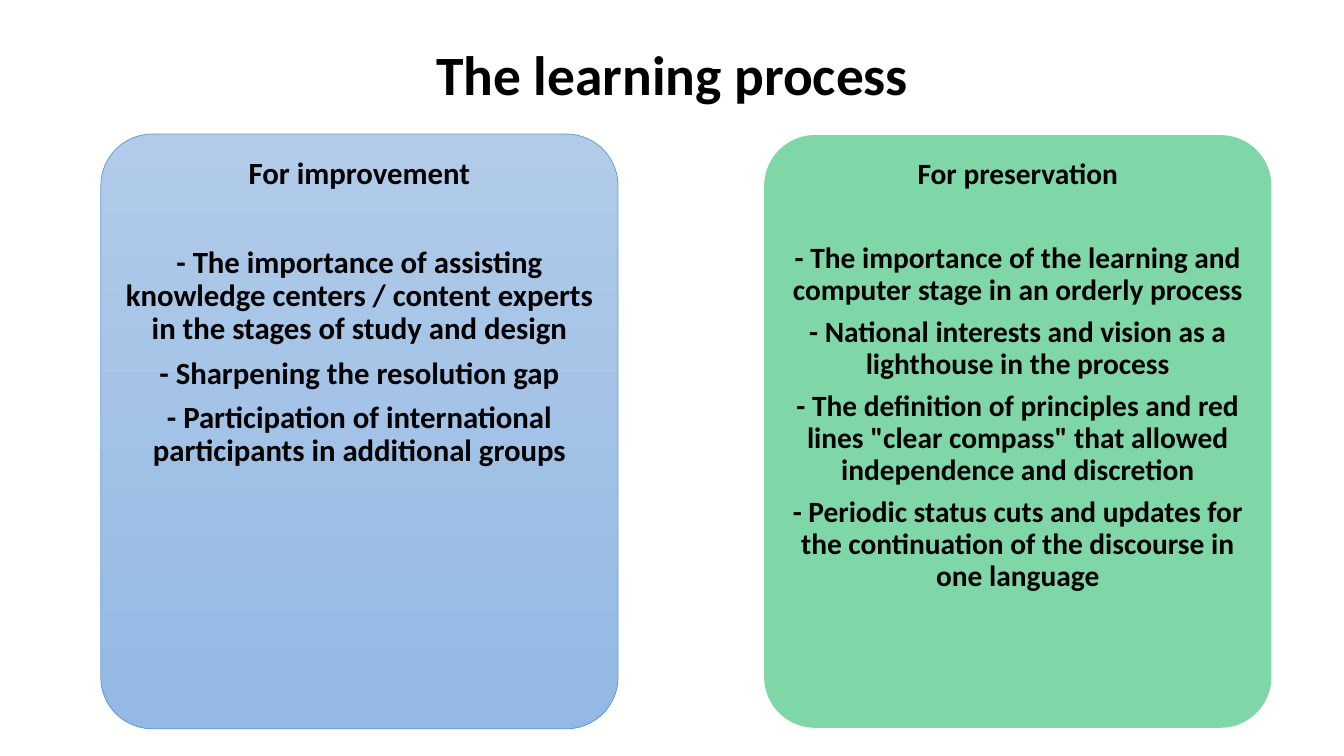
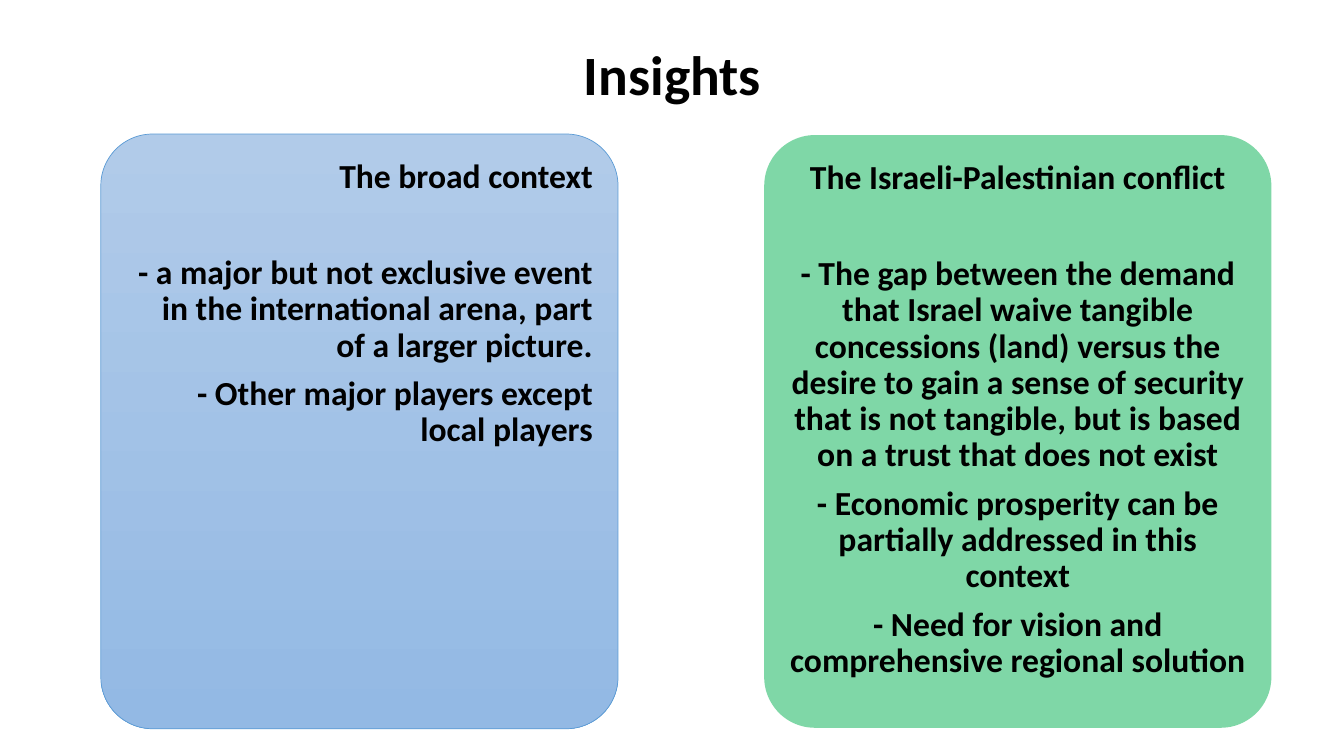
from pptx import Presentation
from pptx.dml.color import RGBColor
from pptx.enum.shapes import MSO_SHAPE
from pptx.enum.text import MSO_ANCHOR, MSO_AUTO_SIZE, PP_ALIGN
from pptx.oxml.ns import qn
from pptx.util import Inches, Pt
from lxml.etree import SubElement

FONT = "Calibri"
BLACK = "000000"
BLUE_LIGHT, BLUE_DARK, BLUE_LINE = "B1CBE9", "93B9E4", "5B9BD5"
GREEN = "00B050"
GREEN_OPACITY = 50
TITLE_BOX = (0.58, 0.4, 12.18, 0.74)
LEFT_BOX = (1, 1.33, 5.13, 5.9)
RIGHT_BOX = (7.58, 1.34, 5.03, 5.88)
CORNER = 0.1
LINE_SPACING = 0.9
# Space after a paragraph, as a multiple of the text size
HEADING_GAP, POINT_GAP = 1.79, 0.36

SLIDES = [
    ("The learning process",
     (22, PP_ALIGN.CENTER, "For improvement", [
         "- The importance of assisting knowledge centers / content experts "
         "in the stages of study and design",
         "- Sharpening the resolution gap",
         "- Participation of international participants in additional groups",
     ]),
     (21, PP_ALIGN.CENTER, "For preservation", [
         "- The importance of the learning and computer stage in an orderly process",
         "- National interests and vision as a lighthouse in the process",
         "- The definition of principles and red lines \"clear compass\" that "
         "allowed independence and discretion",
         "- Periodic status cuts and updates for the continuation of the "
         "discourse in one language",
     ])),
    ("Insights",
     (24, PP_ALIGN.RIGHT, "The broad context", [
         "- a major but not exclusive event in the international arena, "
         "part of a larger picture.",
         "- Other major players except local players",
     ]),
     (24, PP_ALIGN.CENTER, "The Israeli-Palestinian conflict", [
         "- The gap between the demand that Israel waive tangible concessions "
         "(land) versus the desire to gain a sense of security that is not "
         "tangible, but is based on a trust that does not exist",
         "- Economic prosperity can be partially addressed in this context",
         "- Need for vision and comprehensive regional solution",
     ])),
]


def color(hex_code):
    return RGBColor.from_string(hex_code)


def write(p, text, size, align):
    """Add one bold run to a paragraph in the deck's text style."""
    p.alignment = align
    p.line_spacing = LINE_SPACING
    p.space_before = Pt(0)
    r = p.add_run()
    r.text = text
    r.font.name = FONT
    r.font.size = Pt(size)
    r.font.bold = True
    r.font.color.rgb = color(BLACK)


def place_title(layout):
    """Set the title position that every slide inherits."""
    title = layout.placeholders[0]
    title.left, title.top, title.width, title.height = map(Inches, TITLE_BOX)


def add_title(s, text):
    tf = s.shapes.title.text_frame
    tf.auto_size = MSO_AUTO_SIZE.NONE
    tf.vertical_anchor = MSO_ANCHOR.MIDDLE
    write(tf.paragraphs[0], text, 39.6, PP_ALIGN.CENTER)


def fill_blue(panel):
    panel.fill.gradient()
    panel.fill.gradient_angle = 270
    for stop, shade in zip(panel.fill.gradient_stops, (BLUE_LIGHT, BLUE_DARK)):
        stop.color.rgb = color(shade)
    panel.line.color.rgb = color(BLUE_LINE)
    panel.line.width = Pt(0.5)


def fill_green(panel):
    panel.fill.solid()
    panel.fill.fore_color.rgb = color(GREEN)
    solid = panel.fill._xPr.find(qn("a:solidFill"))
    SubElement(solid[0], qn("a:alpha")).set("val", str(GREEN_OPACITY * 1000))
    panel.line.fill.background()


def add_panel(s, box, paint, content):
    """Add a rounded panel with a heading and its points."""
    size, align, heading, points = content
    panel = s.shapes.add_shape(MSO_SHAPE.ROUNDED_RECTANGLE, *map(Inches, box))
    panel.adjustments[0] = CORNER
    panel.shadow.inherit = False
    paint(panel)

    tf = panel.text_frame
    tf.word_wrap = True
    tf.vertical_anchor = MSO_ANCHOR.TOP
    inset = Pt(size * 0.3)
    tf.margin_left = tf.margin_right = tf.margin_top = tf.margin_bottom = inset
    p = tf.paragraphs[0]
    write(p, heading, size, align)
    p.space_after = Pt(size * HEADING_GAP)
    for point in points:
        p = tf.add_paragraph()
        write(p, point, size, align)
        p.space_after = Pt(size * POINT_GAP)


def main():
    prs = Presentation()
    prs.slide_width, prs.slide_height = Inches(13.33), Inches(7.5)
    layout = prs.slide_layouts.get_by_name("Title Only")
    place_title(layout)
    for title, left, right in SLIDES:
        s = prs.slides.add_slide(layout)
        add_title(s, title)
        add_panel(s, LEFT_BOX, fill_blue, left)
        add_panel(s, RIGHT_BOX, fill_green, right)
    prs.save("out.pptx")


if __name__ == "__main__":
    main()
